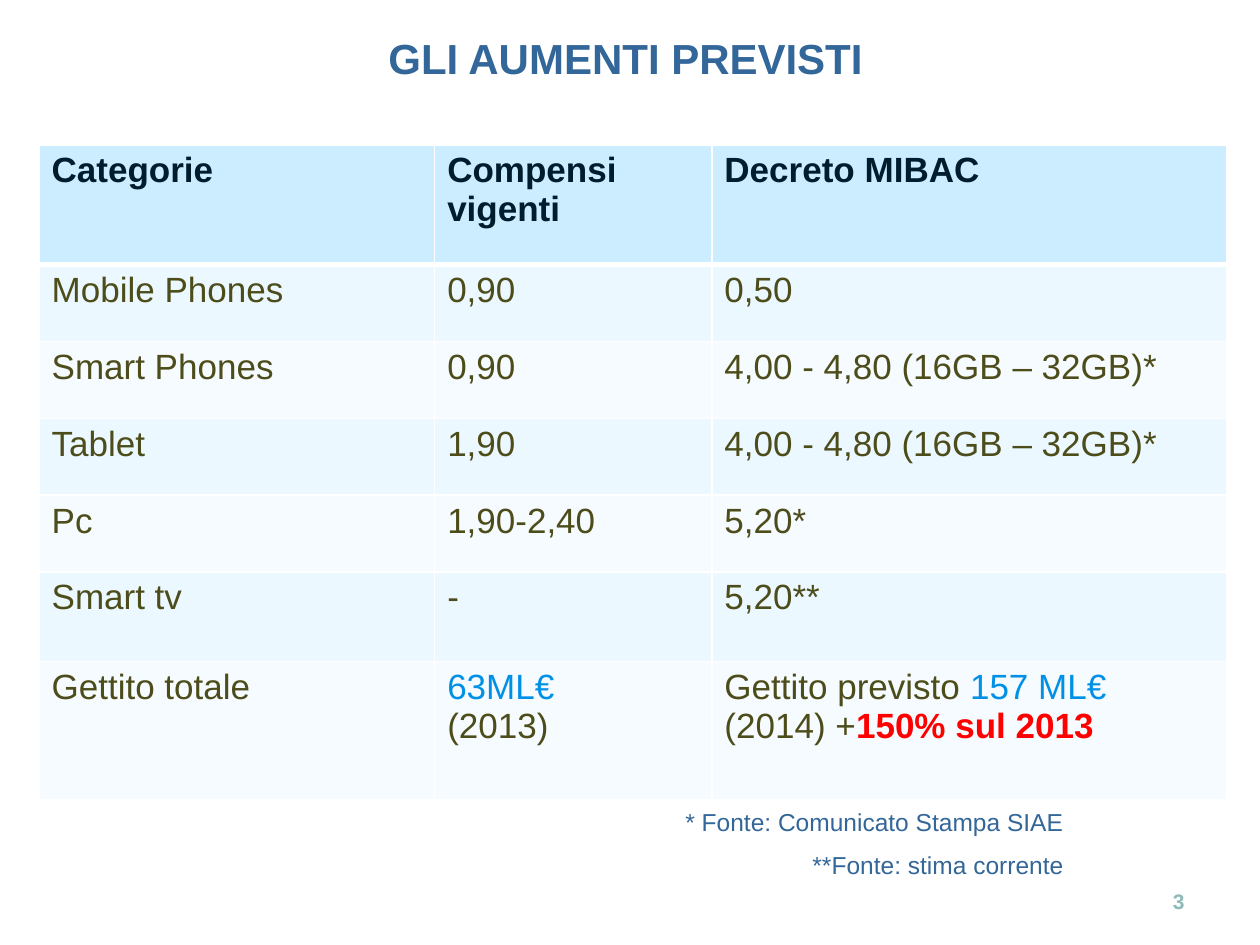
import pptx
import pptx.dml.color
import pptx.enum.text
import pptx.oxml
import pptx.oxml.ns
import pptx.util
from pptx.util import Inches

RGBColor = pptx.dml.color.RGBColor
ALIGN = pptx.enum.text.PP_ALIGN
ANCHOR = pptx.enum.text.MSO_ANCHOR
BLUE = RGBColor(0x33, 0x66, 0x99)
NAVY = RGBColor(0x00, 0x1D, 0x2E)
OLIVE = RGBColor(0x4D, 0x4D, 0x1B)
AZURE = RGBColor(0x00, 0x90, 0xE6)
RED = RGBColor(0xFF, 0x00, 0x00)
TEAL = RGBColor(0x8C, 0xBA, 0xBA)
HEADER_FILL = RGBColor(0xCC, 0xEC, 0xFF)
BAND_FILLS = [RGBColor(0xF6, 0xFB, 0xFF), RGBColor(0xEC, 0xF8, 0xFF)]


def add_span(para, text, size, color, bold=False):
    span = para.add_run()
    span.text = text
    span.font.name = "Arial"
    span.font.size = pptx.util.Pt(size)
    span.font.bold = bold
    span.font.color.rgb = color


def add_border(cell, side, points, position):
    line = pptx.oxml.parse_xml(
        f'<a:{side} {pptx.oxml.ns.nsdecls("a")} w="{pptx.util.Pt(points)}">'
        f'<a:solidFill><a:srgbClr val="FFFFFF"/></a:solidFill></a:{side}>'
    )
    cell._tc.get_or_add_tcPr().insert(position, line)


deck = pptx.Presentation()
deck.slide_width = Inches(10)
deck.slide_height = Inches(7.5)
page = deck.slides.add_slide(deck.slide_layouts[5])

title = page.shapes.title
title.left, title.top = Inches(0.12), Inches(0.21)
title.width, title.height = Inches(9.69), Inches(0.5)
title.text_frame.auto_size = pptx.enum.text.MSO_AUTO_SIZE.NONE
title.text_frame.vertical_anchor = ANCHOR.TOP
title_para = title.text_frame.paragraphs[0]
title_para.alignment = ALIGN.CENTER
add_span(title_para, "GLI AUMENTI PREVISTI", 24, BLUE, True)

rows = [
    ["Categorie", "Compensi vigenti", "Decreto MIBAC"],
    ["Mobile Phones", "0,90", "0,50"],
    ["Smart Phones", "0,90", "4,00 - 4,80 (16GB – 32GB)*"],
    ["Tablet", "1,90", "4,00 - 4,80 (16GB – 32GB)*"],
    ["Pc", "1,90-2,40", "5,20*"],
    ["Smart tv", "-", "5,20**"],
    ["Gettito totale", "", ""],
]
column_widths = [3.14, 2.2, 4.09]
row_heights = [0.95, 0.61, 0.61, 0.61, 0.61, 0.71, 1.1]
frame = page.shapes.add_table(
    len(rows), len(column_widths), Inches(0.31), Inches(1.15),
    Inches(sum(column_widths)), Inches(sum(row_heights)),
)
table = frame.table
for column, width in zip(table.columns, column_widths):
    column.width = Inches(width)
for row, height in zip(table.rows, row_heights):
    row.height = Inches(height)

for r, texts in enumerate(rows):
    for c, text in enumerate(texts):
        cell = table.cell(r, c)
        cell.fill.solid()
        cell.fill.fore_color.rgb = HEADER_FILL if r == 0 else BAND_FILLS[r % 2]
        for position, side in enumerate(["lnL", "lnR", "lnT", "lnB"]):
            thick = (r, side) in [(0, "lnB"), (1, "lnT")]
            add_border(cell, side, 3 if thick else 1, position)
        para = cell.text_frame.paragraphs[0]
        para.alignment = ALIGN.LEFT
        if text:
            add_span(para, text, 20, NAVY if r == 0 else OLIVE, r == 0)

current_total = table.cell(6, 1).text_frame.paragraphs[0]
add_span(current_total, "63ML€", 20, AZURE)
current_total.add_line_break()
add_span(current_total, "(2013)", 20, OLIVE)

expected_total = table.cell(6, 2).text_frame.paragraphs[0]
add_span(expected_total, "Gettito previsto ", 20, OLIVE)
add_span(expected_total, "157 ML€ ", 20, AZURE)
add_span(expected_total, "(2014) +", 20, OLIVE)
add_span(expected_total, "150% sul 2013", 20, RED, True)

notes = [
    ("3", 7.17, 6.95, 2.33, 0.4, 12, TEAL, True),
    ("* Fonte: Comunicato Stampa SIAE", 4.84, 6.35, 3.7, 0.34, 14, BLUE, False),
    ("**Fonte: stima corrente", 5.55, 6.69, 2.99, 0.34, 14, BLUE, False),
]
for text, left, top, width, height, size, color, bold in notes:
    box = page.shapes.add_textbox(Inches(left), Inches(top), Inches(width), Inches(height))
    box.text_frame.word_wrap = True
    box.text_frame.vertical_anchor = ANCHOR.MIDDLE
    para = box.text_frame.paragraphs[0]
    para.alignment = ALIGN.RIGHT
    add_span(para, text, size, color, bold)

deck.save("out.pptx")
